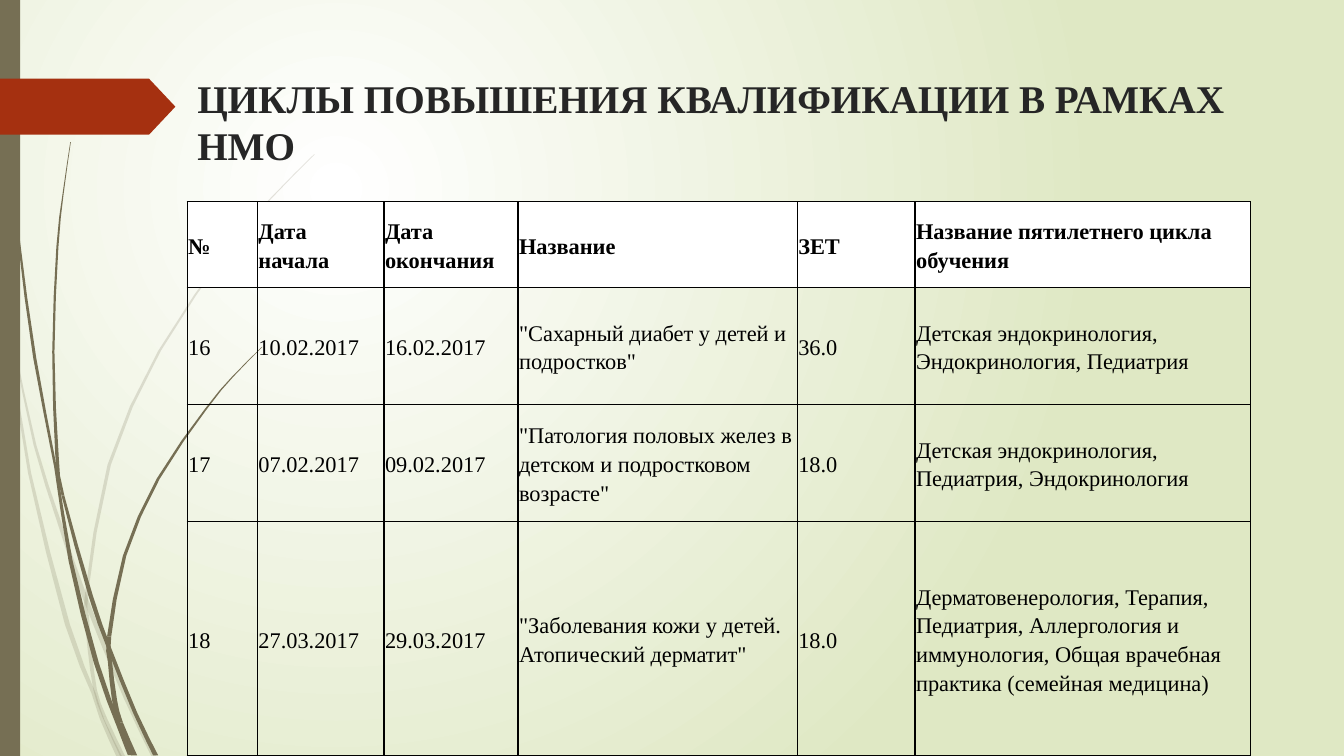
import dataclasses

import pptx
import pptx.dml.color
import pptx.enum.shapes
import pptx.enum.text
import pptx.oxml
import pptx.oxml.ns
import pptx.util

# Content
TITLE = "ЦИКЛЫ ПОВЫШЕНИЯ КВАЛИФИКАЦИИ В РАМКАХ НМО"
COURSES = [
    ("№", "Дата начала", "Дата окончания", "Название", "ЗЕТ",
     "Название пятилетнего цикла обучения"),
    ("16", "10.02.2017", "16.02.2017",
     '"Сахарный диабет у детей и подростков"', "36.0",
     "Детская эндокринология, Эндокринология, Педиатрия"),
    ("17", "07.02.2017", "09.02.2017",
     '"Патология половых желез в детском и подростковом возрасте"', "18.0",
     "Детская эндокринология, Педиатрия, Эндокринология"),
    ("18", "27.03.2017", "29.03.2017",
     '"Заболевания кожи у детей. Атопический дерматит"', "18.0",
     "Дерматовенерология, Терапия, Педиатрия, Аллергология и иммунология, "
     "Общая врачебная практика (семейная медицина)"),
]
COLUMN_WIDTHS = (50.2, 90.4, 95.8, 199.4, 84.2, 239.8)
ROW_HEIGHTS = (61.5, 83.5, 83.5, 167.5)

# Grass blades: points (x of the middle, y, horizontal thickness),
# then the indices of the points where the blade is jointed
PALE_BLADES = [
    ([(0, 209, 1), (7.9, 252, 1.5), (21.2, 338, 2.2), (48.2, 446, 3.6),
      (66.8, 495, 3), (73, 514, 3), (85, 540, 4)], (1, 5)),
    ([(10.6, 250, 1), (25, 318, 2), (43, 375, 2.9), (61.5, 429, 3.6),
      (90, 499, 3), (109.8, 540, 3.6)], (3,)),
    ([(224.6, 110.2, 0.6), (193, 142.2, 1), (164, 176.8, 1.3),
      (114, 250.5, 1.9), (78, 332, 2.4), (62.3, 420.5, 2.2), (62.1, 440, 2.9),
      (64.2, 465, 2.9), (68, 493, 2.5), (74.5, 512, 2.9), (87.5, 540, 3.6)],
     (5, 6, 8, 9)),
]
DARK_BLADES = [
    ([(2.5, 0, 0.7), (5.4, 79, 0.7), (13, 167.5, 1.4), (24.8, 255.6, 2.2),
      (39.5, 333, 1.8), (50.4, 400.5, 2.9), (68.8, 473.5, 3.6),
      (85.5, 520, 3.3), (92.9, 539.5, 3)], (4, 7)),
    ([(50.4, 101.5, 0.4), (45, 139, 0.8), (41, 176.4, 1.5), (38.1, 251.3, 1.6),
      (40.7, 325, 2.4), (45, 354, 2), (64.8, 425.5, 3.2), (78, 463, 3),
      (96.5, 509, 3), (111.2, 539.5, 3.6)], (4, 5, 7)),
    ([(187.4, 247.7, 0.5), (166.3, 269, 1), (147.2, 292, 1.5),
      (113, 342, 2.2), (89, 397, 2.4), (78, 454.5, 3), (78.5, 472, 3),
      (81.8, 500, 3.6), (86, 516, 3.6), (95.8, 539.5, 4.3)], (5, 6, 7, 8)),
]


@dataclasses.dataclass(frozen=True)
class Theme:
    font: str = "Times New Roman"
    title_size: float = 28
    table_size: float = 16
    title: str = "262626"
    text: str = "000000"
    header: str = "FFFFFF"
    grass: str = "766F54"
    accent: str = "A53010"
    glow: str = "FFFFFF"
    backdrop: str = "DFE8C4"


THEME = Theme()
LEFT = 133.7
CURVE_STEPS = 2
Pt = pptx.util.Pt


def rgb(color):
    return pptx.dml.color.RGBColor.from_string(color)


def write(text_frame, text, *, size, color, bold=False, line_spacing=1.0):
    paragraph = text_frame.paragraphs[0]
    paragraph.alignment = pptx.enum.text.PP_ALIGN.LEFT
    paragraph.line_spacing = line_spacing
    run = paragraph.add_run()
    run.text = text
    run.font.name = THEME.font
    run.font.size = Pt(size)
    run.font.bold = bold
    run.font.color.rgb = rgb(color)


def paint(shape, color, opacity=100):
    shape.shadow.inherit = False
    shape.fill.solid()
    shape.fill.fore_color.rgb = rgb(color)
    shape.line.fill.background()
    if opacity < 100:
        color_element = shape.element.find(".//" + pptx.oxml.ns.qn("a:srgbClr"))
        color_element.append(pptx.oxml.parse_xml(
            f'<a:alpha {pptx.oxml.ns.nsdecls("a")} val="{opacity * 1000}"/>'))


def smooth(points):
    """Catmull-Rom curve through the points."""
    padded = [points[0], *points, points[-1]]
    curve = []
    for before, start, end, after in zip(padded, padded[1:], padded[2:], padded[3:]):
        for step in range(CURVE_STEPS):
            t = step / CURVE_STEPS
            curve.append(tuple(
                b + (c - a) * t / 2 + (2 * a - 5 * b + 4 * c - d) * t ** 2 / 2
                + (3 * b - a - 3 * c + d) * t ** 3 / 2
                for a, b, c, d in zip(before, start, end, after)))
    return [*curve, points[-1]]


def add_blade(shapes, points, joints, opacity):
    curve = smooth(points)
    cuts = [0, *joints, len(points) - 1]
    for first, last in zip(cuts, cuts[1:]):
        section = curve[first * CURVE_STEPS:last * CURVE_STEPS + 1]
        left = [(Pt(x - width / 2), Pt(y)) for x, y, width in section]
        right = [(Pt(x + width / 2), Pt(y)) for x, y, width in reversed(section)]
        builder = shapes.build_freeform(*left[0], scale=1.0)
        builder.add_line_segments(left[1:] + right, close=True)
        paint(builder.convert_to_shape(), THEME.grass, opacity)


def set_borders(cell, color, width):
    properties = cell._tc.get_or_add_tcPr()
    for index, side in enumerate(("lnL", "lnR", "lnT", "lnB")):
        properties.insert(index, pptx.oxml.parse_xml(
            f'<a:{side} {pptx.oxml.ns.nsdecls("a")} w="{Pt(width)}">'
            f'<a:solidFill><a:srgbClr val="{color}"/></a:solidFill></a:{side}>'))


def set_background(slide):
    slide.background.fill.gradient()
    gradient = slide.element.find(".//" + pptx.oxml.ns.qn("a:gradFill"))
    gradient.getparent().replace(gradient, pptx.oxml.parse_xml(
        f'<a:gradFill {pptx.oxml.ns.nsdecls("a")} rotWithShape="1"><a:gsLst>'
        f'<a:gs pos="0"><a:srgbClr val="{THEME.glow}"/></a:gs>'
        f'<a:gs pos="100000"><a:srgbClr val="{THEME.backdrop}"/></a:gs></a:gsLst>'
        '<a:path path="circle"><a:fillToRect l="50000" t="50000" r="100000" '
        'b="100000"/></a:path></a:gradFill>'))


def add_decoration(shapes):
    for blades, opacity in ((PALE_BLADES, 20), (DARK_BLADES, 100)):
        for points, joints in blades:
            add_blade(shapes, points, joints, opacity)
    kinds = pptx.enum.shapes.MSO_SHAPE
    side_bar = shapes.add_shape(kinds.RECTANGLE, 0, 0, Pt(14.4), Pt(540))
    paint(side_bar, THEME.grass)
    pointer = shapes.add_shape(kinds.PENTAGON, 0, Pt(56.2), Pt(125.3), Pt(40))
    pointer.adjustments[0] = 0.47
    paint(pointer, THEME.accent)


def add_course_table(shapes):
    frame = shapes.add_table(
        len(COURSES), len(COLUMN_WIDTHS), Pt(LEFT), Pt(144),
        Pt(sum(COLUMN_WIDTHS)), Pt(sum(ROW_HEIGHTS)))
    table = frame.table
    table.first_row = table.horz_banding = False
    for column, width in zip(table.columns, COLUMN_WIDTHS):
        column.width = Pt(width)
    for row_index, (row, height) in enumerate(zip(table.rows, ROW_HEIGHTS)):
        row.height = Pt(height)
        is_header = row_index == 0
        for cell, text in zip(row.cells, COURSES[row_index]):
            cell.margin_left = cell.margin_right = Pt(0.75)
            cell.margin_top = cell.margin_bottom = 0
            cell.vertical_anchor = pptx.enum.text.MSO_ANCHOR.MIDDLE
            if is_header:
                cell.fill.solid()
                cell.fill.fore_color.rgb = rgb(THEME.header)
            else:
                cell.fill.background()
            set_borders(cell, THEME.text, 1)
            write(cell.text_frame, text, size=THEME.table_size, color=THEME.text,
                  bold=is_header, line_spacing=1.15)


def main():
    presentation = pptx.Presentation()
    presentation.slide_width, presentation.slide_height = Pt(960), Pt(540)
    slide = presentation.slides.add_slide(presentation.slide_layouts[5])
    set_background(slide)
    add_decoration(slide.shapes)

    # Title
    title = slide.shapes.title
    title.left, title.top, title.width, title.height = map(Pt, (LEFT, 49.4, 772.6, 100.8))
    title.text_frame.auto_size = pptx.enum.text.MSO_AUTO_SIZE.NONE
    title.text_frame.vertical_anchor = pptx.enum.text.MSO_ANCHOR.TOP
    write(title.text_frame, TITLE, size=THEME.title_size, color=THEME.title, bold=True)

    add_course_table(slide.shapes)
    presentation.save("out.pptx")


if __name__ == "__main__":
    main()
